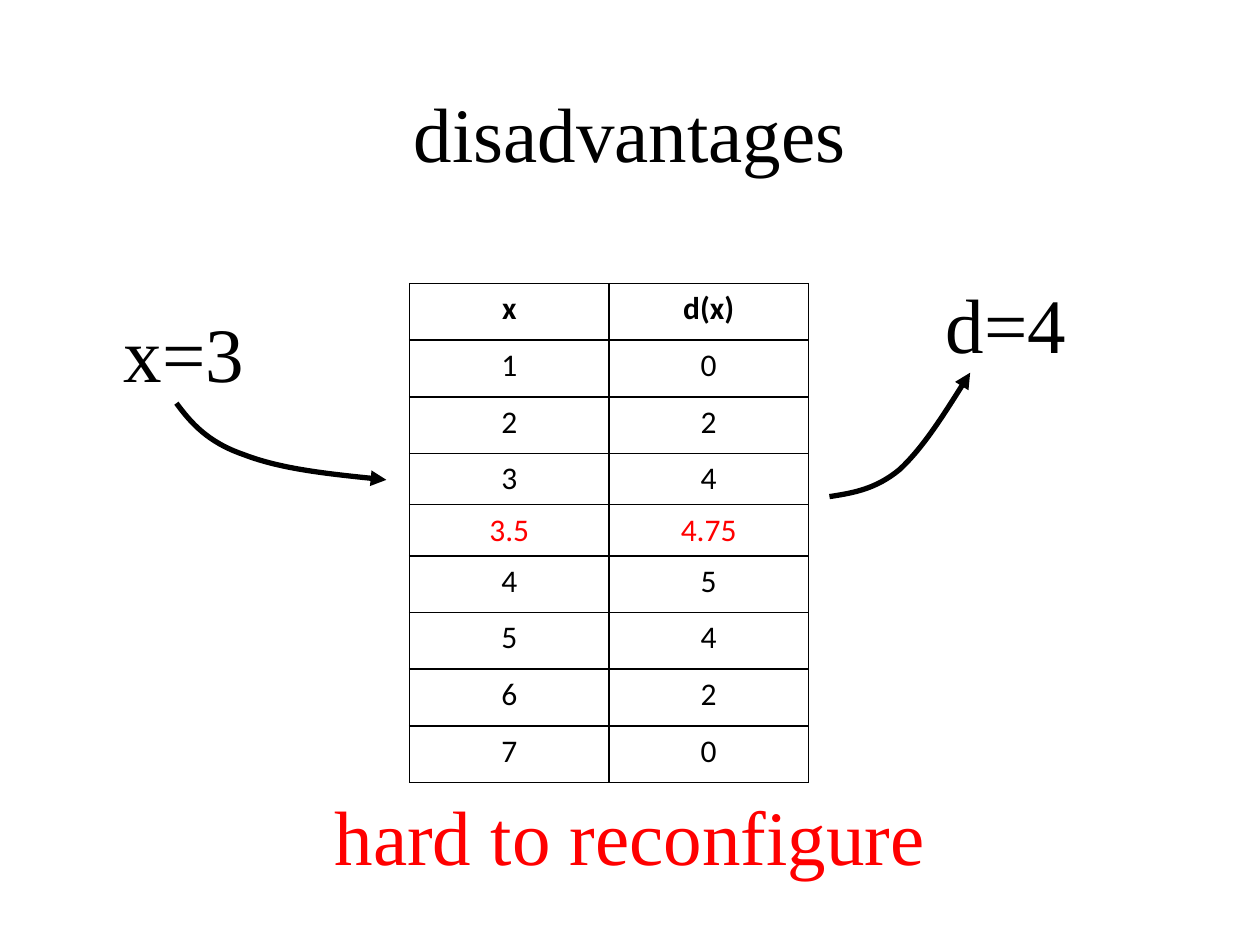
from dataclasses import dataclass

from pptx import Presentation
from pptx import util as u
from pptx.dml.color import RGBColor
from pptx.enum import text
from pptx.oxml import parse_xml
from pptx.oxml.ns import nsdecls, qn


@dataclass(frozen=True)
class Theme:
    ink: str = "000000"
    accent: str = "FF0000"
    serif: str = "Times New Roman"
    sans: str = "Calibri"
    large: int = 44
    small: int = 18
    border: int = 1
    arrow: int = 3


T = Theme()
COLS, ROWS = 120, 90
ROW, HALF_ROW = 5.4, 2.65
ADDED = "3.5"
VALUES = [("x", "d(x)"), ("1", "0"), ("2", "2"), ("3", "4"), (ADDED, "4.75"),
          ("4", "5"), ("5", "4"), ("6", "2"), ("7", "0")]
TO_TABLE = [(0, 0), (0.07, 0.26), (0.15, 0.51), (0.32, 0.67),
            (0.49, 0.85), (0.74, 0.93), (1, 1)]
FROM_TABLE = [(0, 1), (0.17, 0.97), (0.33, 0.94), (0.5, 0.78),
              (0.66, 0.61), (0.83, 0.31), (1, 0)]

prs = Presentation()
prs.slide_width, prs.slide_height = u.Inches(10), u.Inches(7.5)


def across(n):
    return round(n * prs.slide_width / COLS)


def down(n):
    return round(n * prs.slide_height / ROWS)


def emu(box):
    x, y, w, h = box
    return across(x), down(y), across(w), down(h)


def write(tf, words, color, name, size, bold=False):
    tf.word_wrap = True
    p = tf.paragraphs[0]
    p.alignment = text.PP_ALIGN.CENTER
    r = p.add_run()
    r.text = words
    for key, value in dict(name=name, size=u.Pt(size), bold=bold).items():
        setattr(r.font, key, value)
    r.font.color.rgb = RGBColor.from_string(color)


def heading(sp, box, words, color=T.ink):
    for key, value in zip(("left", "top", "width", "height"), emu(box)):
        setattr(sp, key, value)
    tf = sp.text_frame
    tf.auto_size = text.MSO_AUTO_SIZE.NONE
    tf.vertical_anchor = text.MSO_ANCHOR.MIDDLE
    write(tf, words, color, T.serif, T.large)


def label(s, box, words, color=T.ink):
    heading(s.shapes.add_textbox(*emu(box)), box, words, color)


def outline(cell):
    cell.fill.background()
    tc_pr = cell._tc.get_or_add_tcPr()
    for i, side in enumerate(("lnL", "lnR", "lnT", "lnB")):
        tc_pr.insert(i, parse_xml(
            f'<a:{side} {nsdecls("a")} w="{u.Pt(T.border)}"><a:solidFill>'
            f'<a:srgbClr val="{T.ink}"/></a:solidFill></a:{side}>'))


def lookup_table(s, box):
    tbl = s.shapes.add_table(len(VALUES), 2, *emu(box)).table
    tbl.horz_banding = tbl.first_row = False
    for col in tbl.columns:
        col.width = across(box[2] / 2)
    for i, (row, values) in enumerate(zip(tbl.rows, VALUES)):
        row.height = down(HALF_ROW if values[0] in ("3", ADDED) else ROW)
        color = T.accent if values[0] == ADDED else T.ink
        for cell, value in zip(row.cells, values):
            write(cell.text_frame, value, color, T.sans, T.small, i == 0)
            outline(cell)


def curved_arrow(s, box, shares):
    x, y, w, h = emu(box)
    start, *rest = [(round(x + a * w), round(y + b * h)) for a, b in shares]
    fb = s.shapes.build_freeform(*start)
    fb.add_line_segments(rest, close=False)
    sp = fb.convert_to_shape()
    lines = list(sp._element.iter(qn("a:lnTo")))
    for i in range(0, len(lines), 3):
        curve = parse_xml(f'<a:cubicBezTo {nsdecls("a")}/>')
        lines[i].addprevious(curve)
        for line in lines[i:i + 3]:
            curve.append(line[0])
            line.getparent().remove(line)
    sp.shadow.inherit = False
    sp.fill.background()
    sp.line.color.rgb = RGBColor.from_string(T.ink)
    sp.line.width = u.Pt(T.arrow)
    sp.line._get_or_add_ln().append(
        parse_xml(f'<a:tailEnd {nsdecls("a")} type="triangle"/>'))


def lookup_slide():
    s = prs.slides.add_slide(prs.slide_layouts[5])
    heading(s.shapes.title, (0, 5, COLS, 15), "disadvantages")
    lookup_table(s, (39, 27, 38, 7 * ROW + 2 * HALF_ROW))
    label(s, (4, 26, 27, 15), "x=3")
    label(s, (82.3, 23.2, 27, 15), "d=4")
    curved_arrow(s, (16.8, 38.4, 20, 7.3), TO_TABLE)
    curved_arrow(s, (79, 35.5, 13.4, 11.8), FROM_TABLE)
    label(s, (0, 72, COLS, 15), "hard to reconfigure", T.accent)


if __name__ == "__main__":
    lookup_slide()
    prs.save("out.pptx")
